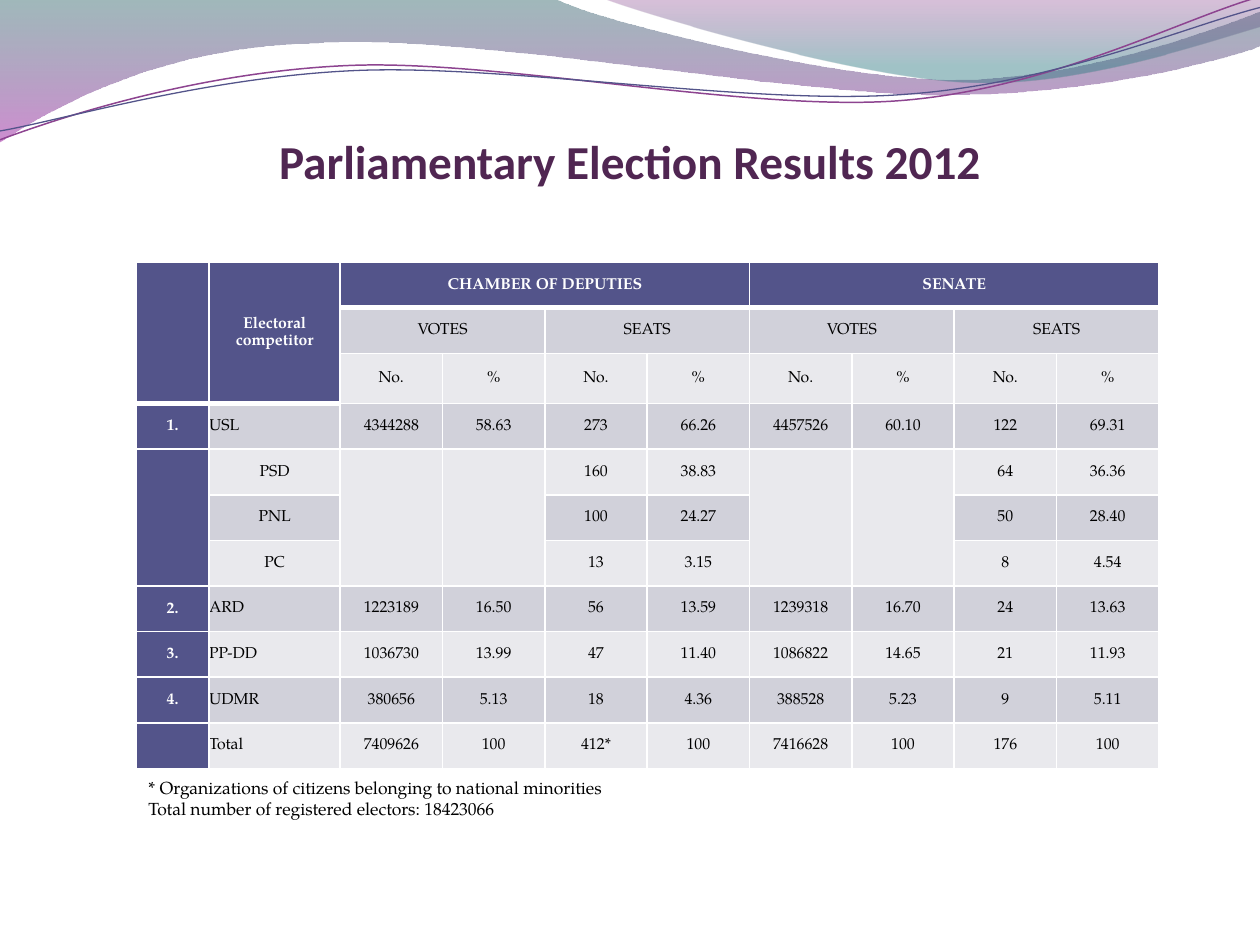
from math import cos, radians, sin

from lxml import etree
from pptx import Presentation
from pptx.dml.color import RGBColor
from pptx.enum.text import MSO_ANCHOR, MSO_AUTO_SIZE, PP_ALIGN
from pptx.oxml.ns import qn
from pptx.util import Inches, Pt

LEFT, CENTER = PP_ALIGN.LEFT, PP_ALIGN.CENTER
MIDDLE, BOTTOM = MSO_ANCHOR.MIDDLE, MSO_ANCHOR.BOTTOM
GROW = MSO_AUTO_SIZE.SHAPE_TO_FIT_TEXT

WHITE = RGBColor(0xFF, 0xFF, 0xFF)
BLACK = RGBColor(0x00, 0x00, 0x00)
PLUM = RGBColor(0x50, 0x26, 0x52)
INDIGO = RGBColor(0x53, 0x54, 0x8A)
BAND_DARK = RGBColor(0xD1, 0xD1, 0xDA)
BAND_LIGHT = RGBColor(0xE9, 0xE9, 0xED)
PURPLE_LINE = RGBColor(0x8D, 0x44, 0x90)
DEEP_TEAL = RGBColor(0x2D, 0x63, 0x68)
ORCHID = RGBColor(0xA5, 0x30, 0xA9)
VIOLET = RGBColor(0x7F, 0x2F, 0x82)
TEAL = RGBColor(0x2F, 0x7B, 0x82)

TITLE_FONT, BODY_FONT = "Calibri", "TeX Gyre Pagella"
CURVE_TILT = 357.3

LEFT_WAVE = [
    (0, 0), (4.4, -0.01),
    (4.76, 0.17, 6.64, 0.63, 7.58, 0.63), (8.53, 0.63, 9.58, 0.26, 10, 0.09),
    (10.01, 0.36),
    (9.83, 0.44, 8.7, 0.76, 7.46, 0.75), (6.22, 0.75, 3.82, 0.28, 2.57, 0.34),
    (1.29, 0.36, 0.46, 0.83, -0.01, 1.13), (0, 0),
]
RIGHT_WAVE = [
    (4.79, -0.01),
    (5.09, 0.11, 6.82, 0.62, 7.69, 0.65), (8.56, 0.69, 9.61, 0.32, 10, 0.21),
    (10, 0), (4.79, -0.01),
]
PURPLE_CURVE = [
    (0, 1.11),
    (0.48, 0.93, 1.58, 0.57, 2.77, 0.52), (3.95, 0.47, 5.93, 0.89, 7.13, 0.8),
    (8.33, 0.71, 9.38, 0.15, 9.98, -0.02),
]
INDIGO_CURVE = [
    (0, 1.04),
    (0.47, 0.96, 1.64, 0.61, 2.83, 0.56), (4.03, 0.51, 5.97, 0.84, 7.17, 0.75),
    (8.36, 0.67, 9.41, 0.21, 10, 0.06),
]

ROWS = [
    ["", "Electoral competitor", "CHAMBER OF DEPUTIES", "", "", "", "SENATE", "", "", ""],
    ["", ""] + ["VOTES", "", "SEATS", ""] * 2,
    ["", ""] + ["No.", "%"] * 4,
    ["1.", "USL", "4344288", "58.63", "273", "66.26", "4457526", "60.10", "122", "69.31"],
    ["", "PSD", "", "", "160", "38.83", "", "", "64", "36.36"],
    ["", "PNL", "", "", "100", "24.27", "", "", "50", "28.40"],
    ["", "PC", "", "", "13", "3.15", "", "", "8", "4.54"],
    ["2.", "ARD", "1223189", "16.50", "56", "13.59", "1239318", "16.70", "24", "13.63"],
    ["3.", "PP-DD", "1036730", "13.99", "47", "11.40", "1086822", "14.65", "21", "11.93"],
    ["4.", "UDMR", "380656", "5.13", "18", "4.36", "388528", "5.23", "9", "5.11"],
    ["", "Total", "7409626", "100", "412*", "100", "7416628", "100", "176", "100"],
]
HEADER_ROWS = 3
MEMBER_ROWS = range(4, 7)
TABLE_WIDTH, TABLE_HEIGHT = 8.12, 4.02
NUMBER_WIDTH = (TABLE_WIDTH - 0.58 - 1.04) / 8
COL_WIDTHS = [0.58, 1.04] + [NUMBER_WIDTH] * 8
ROW_HEIGHT = (TABLE_HEIGHT - 0.4) / 10
ROW_HEIGHTS = [ROW_HEIGHT] * 2 + [0.4] + [ROW_HEIGHT] * 8
MERGES = (
    [(0, c, 2, c) for c in (0, 1)]
    + [(0, c, 0, c + 3) for c in (2, 6)]
    + [(1, c, 1, c + 1) for c in (2, 4, 6, 8)]
    + [(4, c, 6, c) for c in (0, 2, 3, 6, 7)]
)


def rotate(x, y, degrees):
    a = radians(degrees)
    return x * cos(a) - y * sin(a), x * sin(a) + y * cos(a)


def add_outline(s, path, close, tilt=0):
    steps = [[rotate(Inches(x), Inches(y), -tilt) for x, y in zip(step[::2], step[1::2])]
             for step in path]
    anchors = [step[-1] for step in steps]
    builder = s.shapes.build_freeform(*anchors[0])
    builder.add_line_segments(anchors[1:], close=close)
    sp = builder.convert_to_shape()
    for segment, step in zip(list(sp._element.iter(qn("a:lnTo"))), steps[1:]):
        if len(step) == 3:
            segment.tag = qn("a:cubicBezTo")
            segment.clear()
            for x, y in step:
                etree.SubElement(segment, qn("a:pt"),
                                 x=str(round(x - sp.left)), y=str(round(y - sp.top)))
    cx, cy = rotate(sp.left + sp.width / 2, sp.top + sp.height / 2, tilt)
    sp.left, sp.top = round(cx - sp.width / 2), round(cy - sp.height / 2)
    sp.rotation = tilt
    sp.shadow.inherit = False
    return sp


def add_wave(s, path, stops):
    sp = add_outline(s, path, True)
    sp.line.fill.background()
    sp.fill.gradient()
    sp.fill.gradient_angle = 270
    for stop, (position, color, _) in zip(sp.fill.gradient_stops, stops):
        stop.position = position
        stop.color.rgb = color
    for clr, (_, _, opacity) in zip(sp._element.spPr.iter(qn("a:srgbClr")), stops):
        etree.SubElement(clr, qn("a:alpha"), val=str(opacity * 1000))


def add_curve(s, path, color, width):
    sp = add_outline(s, path, False, CURVE_TILT)
    sp.fill.background()
    sp.line.color.rgb = color
    sp.line.width = Pt(width)


def set_font(p, name, size, color, bold=False):
    p.font.name = name
    p.font.size = Pt(size)
    p.font.color.rgb = color
    p.font.bold = bold


def add_title(s, text):
    tf = s.shapes.add_textbox(Inches(0.5), Inches(0.83), Inches(9), Inches(0.67)).text_frame
    tf.word_wrap = True
    tf.vertical_anchor = BOTTOM
    tf.margin_left = tf.margin_right = tf.margin_bottom = 0
    p = tf.paragraphs[0]
    p.text = text
    p.alignment = CENTER
    set_font(p, TITLE_FONT, 27, PLUM, True)


def add_footnotes(s, lines):
    tf = s.shapes.add_textbox(Inches(1.08), Inches(6.12), Inches(8.12), Inches(0.44)).text_frame
    tf.word_wrap = True
    tf.auto_size = GROW
    tf.text = "\n".join(lines)
    for p in tf.paragraphs:
        set_font(p, BODY_FONT, 10, BLACK)


def set_borders(cell, bottom):
    tc_pr = cell._tc.get_or_add_tcPr()
    for side, width in (("L", 1), ("R", 1), ("T", 1), ("B", bottom)):
        ln = etree.SubElement(tc_pr, qn(f"a:ln{side}"), w=str(Pt(width)))
        fill = etree.SubElement(ln, qn("a:solidFill"))
        etree.SubElement(fill, qn("a:srgbClr"), val=str(WHITE))


def style_cell(cell, r, c, text):
    heading = r == 0 or c == 0 or (c == 1 and r < HEADER_ROWS)
    thick = r == 0 or (c < 2 and r < HEADER_ROWS)
    set_borders(cell, 3 if thick else 1)
    cell.fill.solid()
    cell.fill.fore_color.rgb = INDIGO if heading else BAND_DARK if r % 2 else BAND_LIGHT
    cell.margin_left = cell.margin_right = cell.margin_top = cell.margin_bottom = 0
    cell.vertical_anchor = MIDDLE
    if not text:
        return
    p = cell.text_frame.paragraphs[0]
    p.text = text
    party = c == 1 and r >= HEADER_ROWS and r not in MEMBER_ROWS
    p.alignment = LEFT if party else CENTER
    p.line_spacing = 1.07
    p.space_after = Pt(8)
    set_font(p, BODY_FONT, 9, WHITE if heading else BLACK, heading)


def add_results_table(s):
    table = s.shapes.add_table(len(ROWS), len(COL_WIDTHS), Inches(1.08), Inches(2.08),
                               Inches(TABLE_WIDTH), Inches(TABLE_HEIGHT)).table
    table.first_row = table.horz_banding = False
    for column, width in zip(table.columns, COL_WIDTHS):
        column.width = Inches(width)
    for row, height in zip(table.rows, ROW_HEIGHTS):
        row.height = Inches(height)
    for r, values in enumerate(ROWS):
        for c, text in enumerate(values):
            style_cell(table.cell(r, c), r, c, text)
    for top, left, bottom, right in MERGES:
        table.cell(top, left).merge(table.cell(bottom, right))


def main():
    prs = Presentation()
    prs.slide_width, prs.slide_height = Inches(10), Inches(7.5)
    s = prs.slides.add_slide(prs.slide_layouts[6])
    add_wave(s, LEFT_WAVE, [(0, DEEP_TEAL, 45), (1, ORCHID, 55)])
    add_wave(s, RIGHT_WAVE, [(0, VIOLET, 30), (0.8, TEAL, 45)])
    add_curve(s, PURPLE_CURVE, PURPLE_LINE, 0.85)
    add_curve(s, INDIGO_CURVE, INDIGO, 0.75)
    add_title(s, "Parliamentary Election Results 2012")
    add_results_table(s)
    add_footnotes(s, ["* Organizations of citizens belonging to national minorities",
                      "Total number of registered electors: 18423066"])
    prs.save("out.pptx")


if __name__ == "__main__":
    main()
